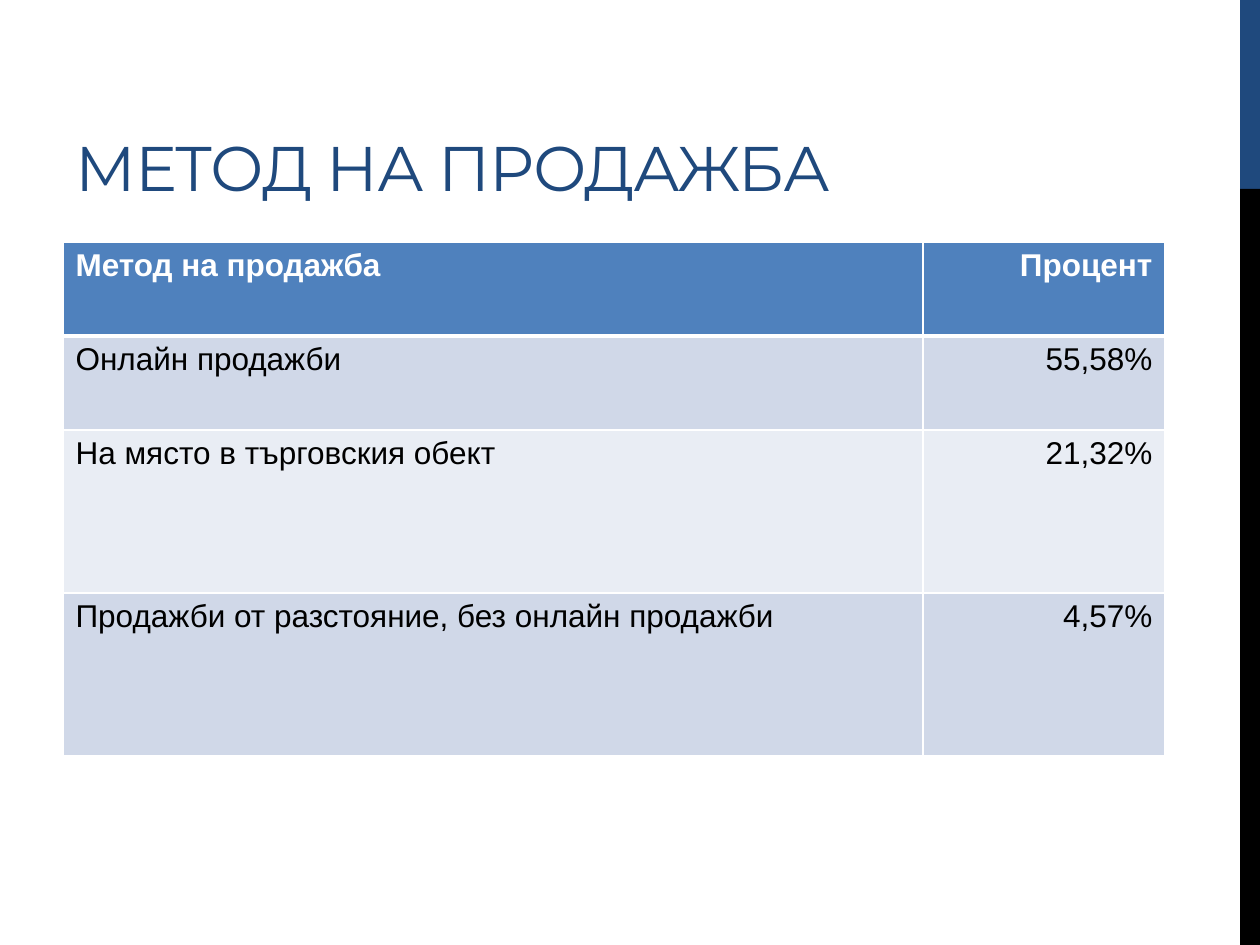
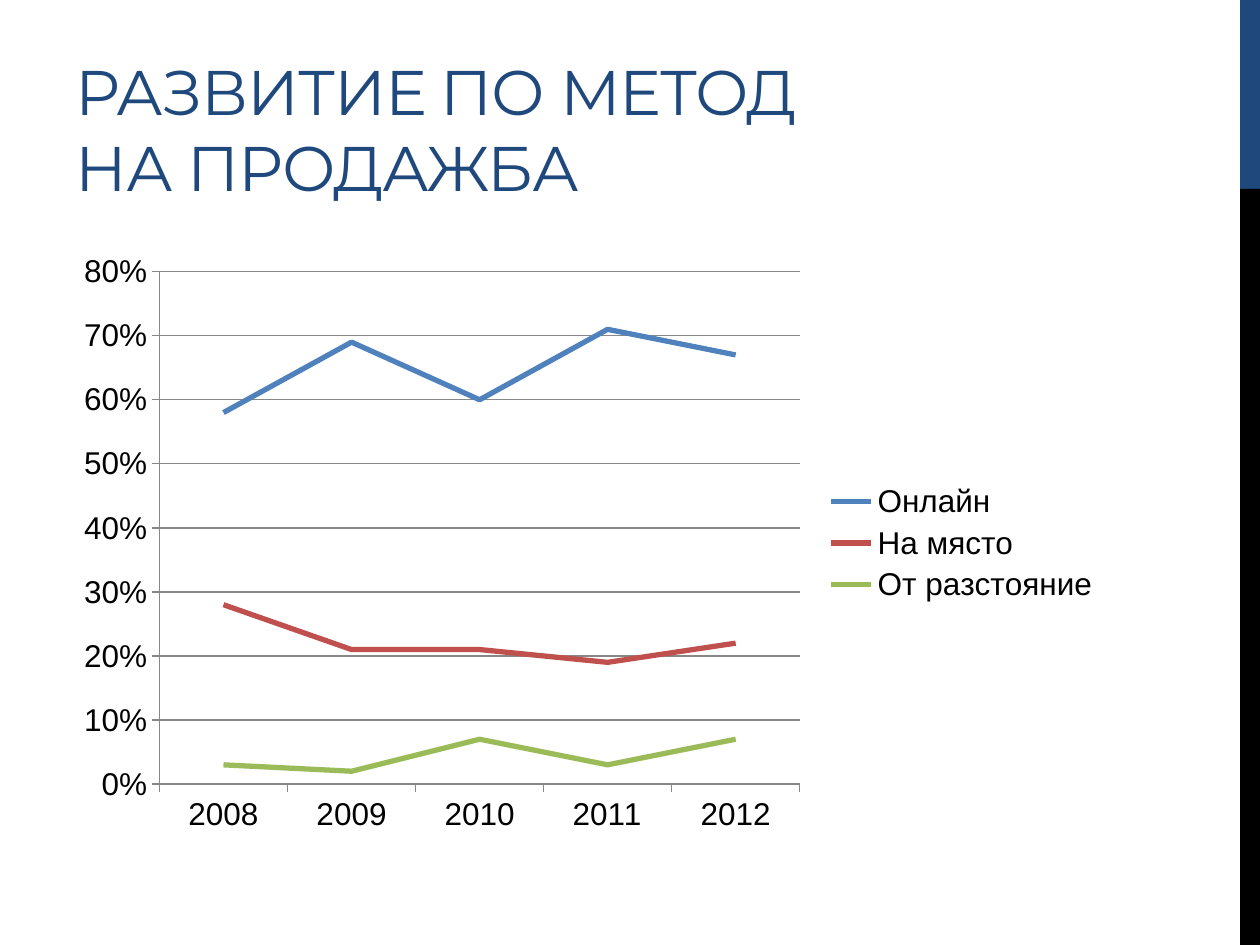
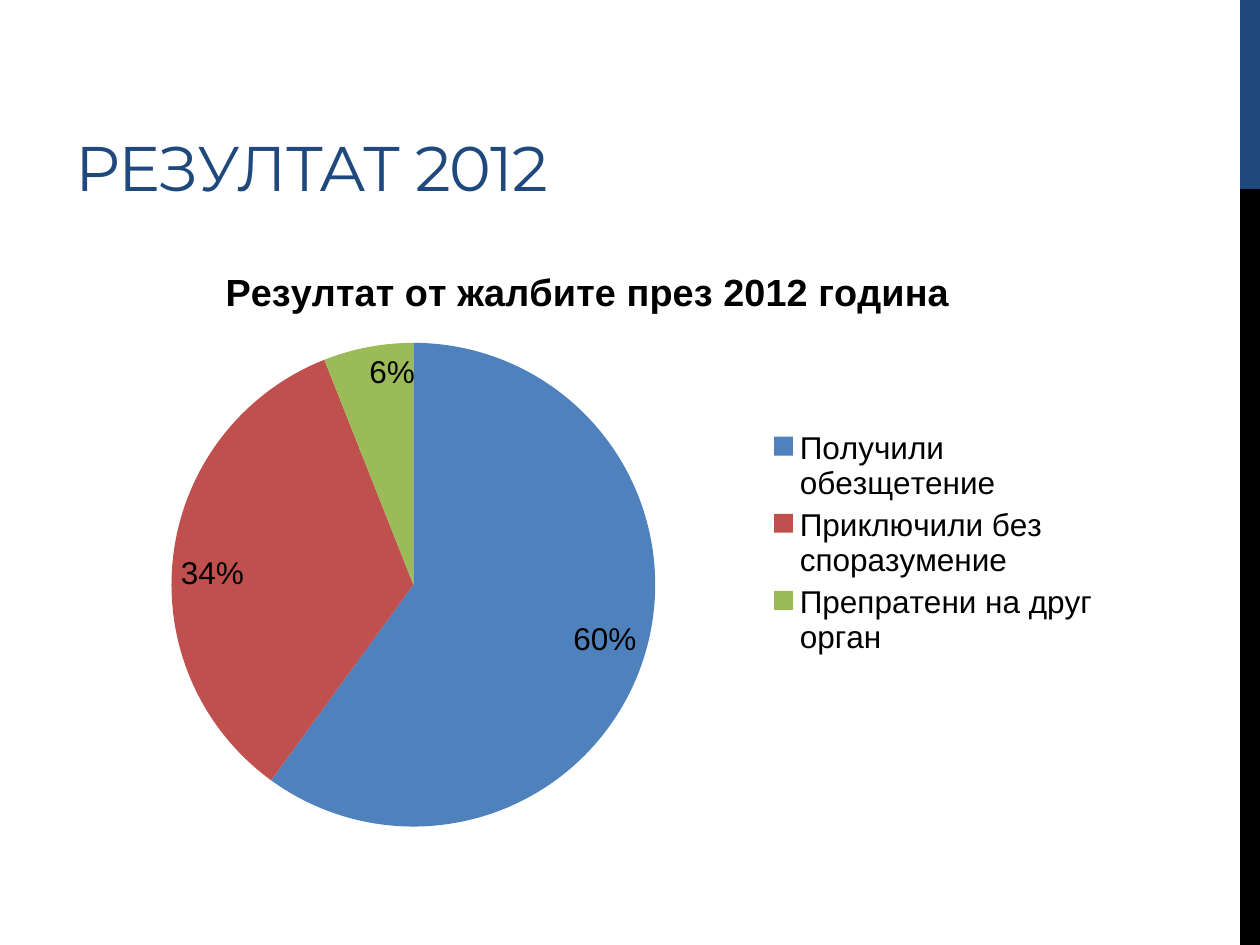
import dataclasses
import typing

import pptx
import pptx.chart.chart
import pptx.chart.data
import pptx.dml.color
import pptx.dml.fill
import pptx.enum.chart
import pptx.enum.shapes
import pptx.enum.text
import pptx.oxml
import pptx.oxml.ns
import pptx.slide
import pptx.util

PX_PER_INCH = 126


@dataclasses.dataclass(frozen=True)
class Theme:
    navy: str = "1F497D"
    black: str = "000000"
    white: str = "FFFFFF"
    header: str = "4F81BD"
    bands: tuple[str, ...] = ("D0D8E8", "E9EDF4")
    series: tuple[str, ...] = ("4F81BD", "C0504D", "9BBB59")
    axis: str = "878787"
    title_font: str = "Montserrat"
    body_font: str = "Arial"
    title_size: float = 36
    body_size: float = 18
    chart_title_size: float = 21.6
    title_spacing: int = -60
    cell_line: float = 1
    header_line: float = 3
    series_line: float = 3
    axis_line: float = 0.75


class Frame(typing.NamedTuple):
    left: int
    top: int
    width: int
    height: int


class Band(typing.NamedTuple):
    frame: Frame
    color: str


class Series(typing.NamedTuple):
    name: str
    values: tuple[float, ...]


THEME = Theme()
BANDS = (
    Band(Frame(1240, 0, 20, 189), THEME.navy),
    Band(Frame(1240, 189, 20, 756), THEME.black),
)
TITLE = Frame(63, 21, 798, 189)
CHART = Frame(63, 242, 1050, 602)
TABLE = Frame(63, 242, 1102, 514)
COLUMN_WIDTHS = (860, 242)
ROW_HEIGHTS = (94, 94, 163, 163)

SALES_METHODS = (
    ("Метод на продажба", "Процент"),
    ("Онлайн продажби", "55,58%"),
    ("На място в търговския обект", "21,32%"),
    ("Продажби от разстояние, без онлайн продажби", "4,57%"),
)
YEARS = ("2008", "2009", "2010", "2011", "2012")
METHOD_TRENDS = (
    Series("Онлайн", (0.58, 0.69, 0.6, 0.71, 0.67)),
    Series("На място", (0.28, 0.21, 0.21, 0.19, 0.22)),
    Series("От разстояние", (0.03, 0.02, 0.07, 0.03, 0.07)),
)
OUTCOMES = ("Получили обезщетение", "Приключили без споразумение", "Препратени на друг орган")
OUTCOME_SHARES = Series("Резултат от жалбите през 2012 година", (0.6, 0.34, 0.06))


# Shared helpers
def emu(px: int) -> pptx.util.Emu:
    return pptx.util.Emu(round(px * 914400 / PX_PER_INCH))


def place(frame: Frame) -> tuple[pptx.util.Emu, ...]:
    return tuple(emu(length) for length in frame)


def rgb(color: str) -> pptx.dml.color.RGBColor:
    return pptx.dml.color.RGBColor.from_string(color)


def paint(fill: pptx.dml.fill.FillFormat, color: str) -> None:
    fill.solid()
    fill.fore_color.rgb = rgb(color)


def style_font(font, name: str, size: float, color: str, bold: bool = False) -> None:
    font.name = name
    font.size = pptx.util.Pt(size)
    font.bold = bold
    font.color.rgb = rgb(color)


# Page with side bands and a title
def add_page(deck, title: str) -> pptx.slide.Slide:
    page = deck.slides.add_slide(deck.slide_layouts[6])
    paint(page.background.fill, THEME.white)
    for band in BANDS:
        box = page.shapes.add_shape(
            pptx.enum.shapes.MSO_SHAPE.RECTANGLE, *place(band.frame))
        box.shadow.inherit = False
        paint(box.fill, band.color)
        box.line.fill.background()
    text_frame = page.shapes.add_textbox(*place(TITLE)).text_frame
    text_frame.word_wrap = True
    text_frame.vertical_anchor = pptx.enum.text.MSO_ANCHOR.BOTTOM
    span = text_frame.paragraphs[0].add_run()
    span.text = title
    style_font(span.font, THEME.title_font, THEME.title_size, THEME.navy)
    span.font._element.set("spc", str(THEME.title_spacing))
    return page


# Table
def add_borders(cell, top: float, bottom: float) -> None:
    properties = cell._tc.get_or_add_tcPr()
    widths = {"lnL": THEME.cell_line, "lnR": THEME.cell_line, "lnT": top, "lnB": bottom}
    for side, width in widths.items():
        properties.append(pptx.oxml.parse_xml(
            f'<a:{side} {pptx.oxml.ns.nsdecls("a")} w="{pptx.util.Pt(width)}">'
            f'<a:solidFill><a:srgbClr val="{THEME.white}"/></a:solidFill></a:{side}>'))


def add_sales_table(page: pptx.slide.Slide) -> None:
    table = page.shapes.add_table(
        len(ROW_HEIGHTS), len(COLUMN_WIDTHS), *place(TABLE)).table
    for column, width in zip(table.columns, COLUMN_WIDTHS):
        column.width = emu(width)
    for row_index, (row, height) in enumerate(zip(table.rows, ROW_HEIGHTS)):
        row.height = emu(height)
        is_header = row_index == 0
        fill = THEME.header if is_header else THEME.bands[(row_index - 1) % 2]
        top = THEME.header_line if row_index == 1 else THEME.cell_line
        bottom = THEME.header_line if is_header else THEME.cell_line
        for column_index, text in enumerate(SALES_METHODS[row_index]):
            cell = table.cell(row_index, column_index)
            add_borders(cell, top, bottom)
            paint(cell.fill, fill)
            para = cell.text_frame.paragraphs[0]
            if column_index == 1:
                para.alignment = pptx.enum.text.PP_ALIGN.RIGHT
            span = para.add_run()
            span.text = text
            style_font(span.font, THEME.body_font, THEME.body_size,
                       THEME.white if is_header else THEME.black, is_header)


# Charts
def add_percent_chart(
    page: pptx.slide.Slide,
    kind: pptx.enum.chart.XL_CHART_TYPE,
    categories: tuple[str, ...],
    series_list: tuple[Series, ...],
) -> pptx.chart.chart.Chart:
    data = pptx.chart.data.CategoryChartData(number_format="0%")
    data.categories = categories
    for series in series_list:
        data.add_series(series.name, series.values)
    chart = page.shapes.add_chart(kind, *place(CHART), data).chart
    style_font(chart.font, THEME.body_font, THEME.body_size, THEME.black)
    chart.has_title = False
    chart.has_legend = True
    chart.legend.position = pptx.enum.chart.XL_LEGEND_POSITION.RIGHT
    chart.legend.include_in_layout = False
    return chart


def style_line(line, color: str, width: float) -> None:
    line.color.rgb = rgb(color)
    line.width = pptx.util.Pt(width)


def add_trend_chart(page: pptx.slide.Slide) -> None:
    chart = add_percent_chart(
        page, pptx.enum.chart.XL_CHART_TYPE.LINE, YEARS, METHOD_TRENDS)
    plot = chart.plots[0]
    plot.vary_by_categories = False
    for series, color in zip(plot.series, THEME.series):
        series.smooth = False
        series.marker.style = pptx.enum.chart.XL_MARKER_STYLE.NONE
        style_line(series.format.line, color, THEME.series_line)
    for axis in (chart.category_axis, chart.value_axis):
        axis.major_tick_mark = pptx.enum.chart.XL_TICK_MARK.OUTSIDE
        style_line(axis.format.line, THEME.axis, THEME.axis_line)
    value_axis = chart.value_axis
    value_axis.minimum_scale = 0
    value_axis.maximum_scale = 0.8
    value_axis.major_unit = 0.1
    value_axis.tick_labels.number_format = "0%"
    value_axis.tick_labels.number_format_is_linked = False
    value_axis.has_major_gridlines = True
    style_line(value_axis.major_gridlines.format.line, THEME.axis, THEME.axis_line)


def add_outcome_chart(page: pptx.slide.Slide) -> None:
    chart = add_percent_chart(
        page, pptx.enum.chart.XL_CHART_TYPE.PIE, OUTCOMES, (OUTCOME_SHARES,))
    span = chart.chart_title.text_frame.paragraphs[0].add_run()
    span.text = OUTCOME_SHARES.name
    style_font(span.font, THEME.body_font, THEME.chart_title_size, THEME.black, True)
    chart.chart_title.include_in_layout = False
    plot = chart.plots[0]
    plot.vary_by_categories = True
    for index, color in enumerate(THEME.series):
        paint(plot.series[0].points[index].format.fill, color)
    plot.has_data_labels = True
    labels = plot.data_labels
    labels.show_value = True
    labels.show_percentage = False
    labels.number_format = "0%"
    labels.number_format_is_linked = False
    labels.position = pptx.enum.chart.XL_LABEL_POSITION.INSIDE_END
    style_font(labels.font, THEME.body_font, THEME.body_size, THEME.black)


def main() -> None:
    deck = pptx.Presentation()
    deck.slide_width, deck.slide_height = emu(1260), emu(945)
    add_sales_table(add_page(deck, "МЕТОД НА ПРОДАЖБА"))
    add_trend_chart(add_page(deck, "РАЗВИТИЕ ПО МЕТОД НА ПРОДАЖБА"))
    add_outcome_chart(add_page(deck, "РЕЗУЛТАТ 2012"))
    deck.save("out.pptx")


if __name__ == "__main__":
    main()
